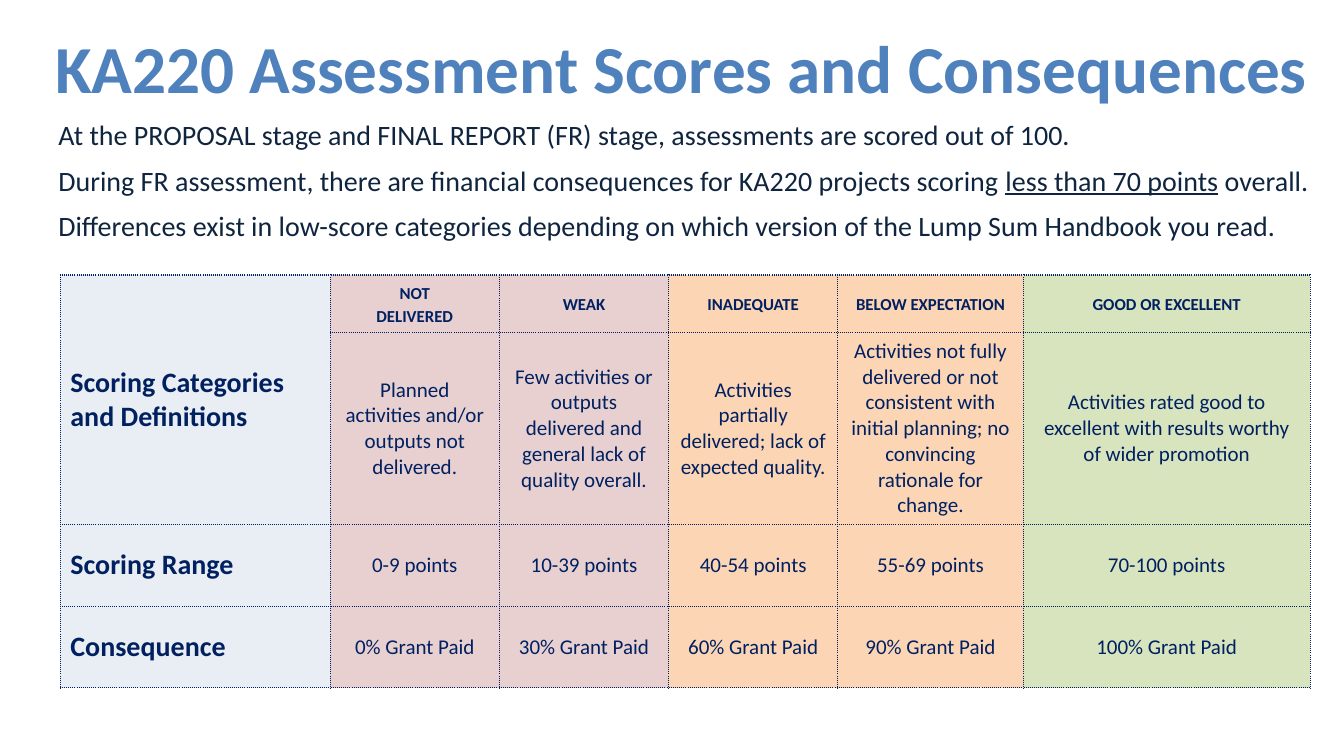
from copy import deepcopy

from lxml.etree import SubElement
from pptx import Presentation
from pptx.dml.color import RGBColor
from pptx.enum.text import MSO_ANCHOR, MSO_AUTO_SIZE, PP_ALIGN
from pptx.oxml.ns import qn
from pptx.util import Cm, Pt

COLORS = {
    "title": "4F81BD",
    "body": "0F243E",
    "table": "002060",
    "label": "E9EDF4",
    "low": "E8D0D0",
    "middle": "FCD5B5",
    "high": "D7E4BD",
}
TITLE = "KA220 Assessment Scores and Consequences"
NOTES = [
    ["At the PROPOSAL stage and FINAL REPORT (FR) stage, assessments are scored out of 100."],
    ["During FR assessment, there are financial consequences for KA220 projects scoring ",
     "less than 70 points", " overall."],
    ["Differences exist in low-score categories depending on which version of the "
     "Lump Sum Handbook you read."],
]
UNDERLINED = "less than 70 points"
ROWS = [
    ["Scoring Categories\nand Definitions", "not\ndelivered", "weak", "inadequate",
     "below expectation", "good or excellent"],
    ["", "Planned activities and/or outputs not delivered.",
     "Few activities or outputs delivered and general lack of quality overall.",
     "Activities partially delivered; lack of expected quality.",
     "Activities not fully delivered or not consistent with initial planning; "
     "no convincing rationale for change.",
     "Activities rated good to excellent with results worthy of wider promotion"],
    ["Scoring Range", "0-9 points", "10-39 points", "40-54 points", "55-69 points",
     "70-100 points"],
    ["Consequence", "0% Grant Paid", "30% Grant Paid", "60% Grant Paid", "90% Grant Paid",
     "100% Grant Paid"],
]
COLUMN_FILLS = ["label", "low", "low", "middle", "middle", "high"]
COLUMN_SHARES = [2.68, 1.68, 1.68, 1.68, 1.84, 2.85]
ROW_SHARES = [0.57, 1.91, 0.81, 0.81]


def style_span(span, size, color, bold=False):
    """Give a run its font, size, colour and weight."""
    span.font.name = "Calibri"
    span.font.size = Pt(size)
    span.font.bold = bold
    span.font.color.rgb = RGBColor.from_string(COLORS[color])


def add_title(slide, left, top, width, height):
    """Place and format the title placeholder."""
    title = slide.shapes.title
    title.left, title.top, title.width, title.height = left, top, width, height
    frame = title.text_frame
    frame.text = TITLE
    frame.auto_size = MSO_AUTO_SIZE.NONE
    frame.vertical_anchor = MSO_ANCHOR.TOP
    para = frame.paragraphs[0]
    para.alignment = PP_ALIGN.LEFT
    style_span(para.runs[0], 48, "title", bold=True)


def add_notes(slide, left, top, width, height):
    """Add the introductory statements above the table."""
    frame = slide.shapes.add_textbox(left, top, width, height).text_frame
    frame.word_wrap = True
    for index, parts in enumerate(NOTES):
        para = frame.add_paragraph() if index else frame.paragraphs[0]
        if index:
            para.space_before = Pt(8.5)
        for part in parts:
            span = para.add_run()
            span.text = part
            style_span(span, 20, "body")
            if part == UNDERLINED:
                span.font.underline = True


def add_borders(cell):
    """Draw dotted lines on the four sides of a cell."""
    properties = cell._tc.get_or_add_tcPr()
    for side in ("a:lnL", "a:lnR", "a:lnT", "a:lnB"):
        line = SubElement(properties, qn(side), w=str(Pt(1)))
        fill = SubElement(line, qn("a:solidFill"))
        SubElement(fill, qn("a:srgbClr"), val=COLORS["table"])
        SubElement(line, qn("a:prstDash"), val="sysDot")


def fill_cell(cell, text, fill, is_label, is_heading):
    """Format one table cell and write its text."""
    add_borders(cell)
    cell.fill.solid()
    cell.fill.fore_color.rgb = RGBColor.from_string(COLORS[fill])
    cell.vertical_anchor = MSO_ANCHOR.MIDDLE
    para = cell.text_frame.paragraphs[0]
    para.text = text
    para.alignment = PP_ALIGN.LEFT if is_label else PP_ALIGN.CENTER
    if is_heading:
        para.line_spacing = 0.9
    for span in para.runs:
        style_span(span, 20 if is_label else 15, "table", is_label or is_heading)
        if is_heading:
            span.font._element.set("cap", "small")
    for line_break in para._p.findall(qn("a:br")):
        line_break.append(deepcopy(para.runs[0].font._element))


def add_score_table(slide, left, top, width, height):
    """Add the table of scoring categories, ranges and consequences."""
    table = slide.shapes.add_table(len(ROWS), len(COLUMN_FILLS), left, top, width, height).table
    table.first_row = False
    table.horz_banding = False
    for column, share in zip(table.columns, COLUMN_SHARES):
        column.width = int(width * share / sum(COLUMN_SHARES))
    for row, share in zip(table.rows, ROW_SHARES):
        row.height = int(height * share / sum(ROW_SHARES))
    table.cell(0, 0).merge(table.cell(1, 0))
    for row_index, texts in enumerate(ROWS):
        for column_index, (text, fill) in enumerate(zip(texts, COLUMN_FILLS)):
            is_label = column_index == 0
            fill_cell(table.cell(row_index, column_index), text, fill, is_label,
                      row_index == 0 and not is_label)


def main():
    """Build the slide and save the deck."""
    deck = Presentation()
    deck.slide_width, deck.slide_height = Cm(33.87), Cm(19.05)
    slide = deck.slides.add_slide(deck.slide_layouts[5])
    add_title(slide, Cm(1.14), Cm(0.53), Cm(32.41), Cm(2.31))
    add_notes(slide, Cm(1.22), Cm(2.84), Cm(32.31), Cm(3.43))
    add_score_table(slide, Cm(1.52), Cm(6.93), Cm(31.5), Cm(10.4))
    deck.save("out.pptx")


if __name__ == "__main__":
    main()
